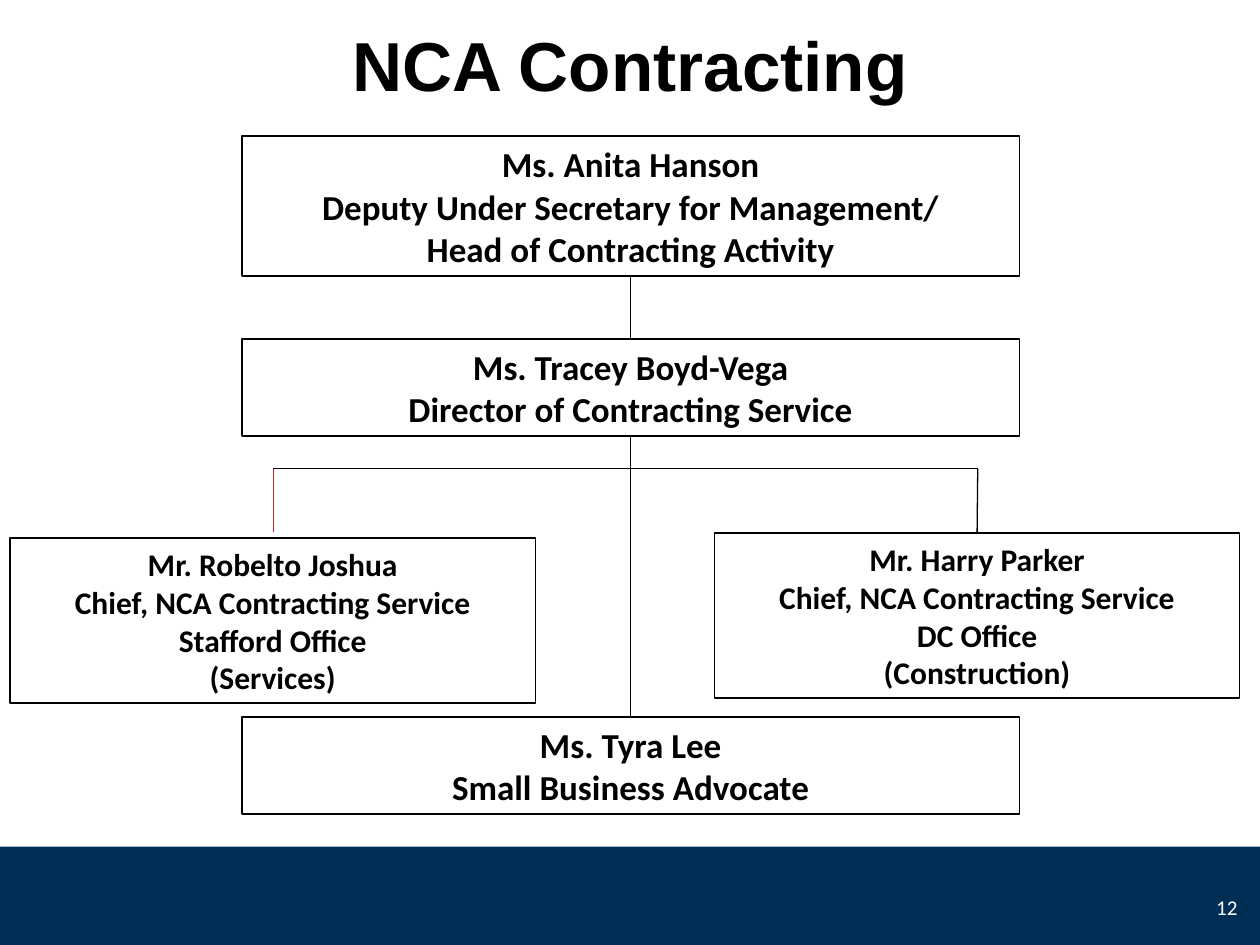
"""Build the NCA Contracting organisation chart slide."""
from dataclasses import dataclass
from typing import Optional

from lxml import etree
from pptx import Presentation
from pptx.dml.color import RGBColor
from pptx.enum import shapes, text
from pptx.oxml import ns
from pptx.util import Inches, Pt

BLACK = RGBColor(0x00, 0x00, 0x00)
WHITE = RGBColor(0xFF, 0xFF, 0xFF)
NAVY = RGBColor(0x00, 0x2F, 0x56)
RED = RGBColor(0xC6, 0x21, 0x2C)
TOP, BOTTOM = 0, 2
MAIN_LEFT, MAIN_WIDTH = 1.92, 6.17
OFFICE_WIDTH, OFFICE_HEIGHT = 4.17, 1.31


@dataclass(frozen=True)
class Post:
    left: float
    top: float
    width: float
    height: float
    size: int
    lines: tuple[str, ...]


@dataclass(frozen=True)
class Link:
    start: tuple[float, float]
    end: tuple[float, float]
    color: RGBColor = BLACK
    above: Optional[str] = None
    below: Optional[str] = None


POSTS = {
    "deputy": Post(MAIN_LEFT, 1.08, MAIN_WIDTH, 1.11, 20, (
        "Ms. Anita Hanson", "Deputy Under Secretary for Management/",
        "Head of Contracting Activity")),
    "director": Post(MAIN_LEFT, 2.69, MAIN_WIDTH, 0.77, 20, (
        "Ms. Tracey Boyd-Vega", "Director of Contracting Service")),
    "stafford": Post(0.08, 4.27, OFFICE_WIDTH, OFFICE_HEIGHT, 18, (
        "Mr. Robelto Joshua", "Chief, NCA Contracting Service",
        "Stafford Office", "(Services)")),
    "dc": Post(5.67, 4.23, OFFICE_WIDTH, OFFICE_HEIGHT, 18, (
        "Mr. Harry Parker", "Chief, NCA Contracting Service",
        "DC Office", "(Construction)")),
    "advocate": Post(MAIN_LEFT, 5.69, MAIN_WIDTH, 0.77, 20, (
        "Ms. Tyra Lee", "Small Business Advocate")),
}
LINKS = (
    Link((5.01, 3.72), (2.17, 3.72)),
    Link((5.01, 3.72), (7.76, 3.72)),
    Link((5, 3.46), (5, 5.69), above="director", below="advocate"),
    Link((2.17, 3.72), (2.17, 4.22), RED),
    Link((7.76, 3.72), (7.76, 4.23), below="dc"),
    Link((5, 2.19), (5, 2.69), above="deputy", below="director"),
)


def write(frame, lines: tuple[str, ...], size: float, font: str,
          color: RGBColor, bold: bool, align) -> None:
    """Fill a text frame with evenly styled paragraphs."""
    frame.word_wrap = True
    frame.vertical_anchor = text.MSO_ANCHOR.MIDDLE
    frame.text = "\n".join(lines)
    for paragraph in frame.paragraphs:
        paragraph.alignment = align
        paragraph.font.size = Pt(size)
        paragraph.font.name = font
        paragraph.font.bold = bold
        paragraph.font.color.rgb = color


def add_post(slide, post: Post):
    """Draw one outlined box of the chart."""
    box = slide.shapes.add_shape(
        shapes.MSO_SHAPE.RECTANGLE, Inches(post.left), Inches(post.top),
        Inches(post.width), Inches(post.height))
    box.shadow.inherit = False
    box.fill.background()
    box.line.color.rgb = BLACK
    box.line.width = Pt(0.75)
    write(box.text_frame, post.lines, post.size, "Calibri", BLACK, True,
          text.PP_ALIGN.CENTER)
    return box


def add_link(slide, link: Link, boxes: dict) -> None:
    """Draw one line, joined to the boxes it touches."""
    line = slide.shapes.add_connector(
        shapes.MSO_CONNECTOR.STRAIGHT,
        *(Inches(value) for value in link.start + link.end))
    if link.above:
        line.begin_connect(boxes[link.above], BOTTOM)
    if link.below:
        line.end_connect(boxes[link.below], TOP)
    line.line.color.rgb = link.color
    line.line.width = Pt(0.75)
    etree.SubElement(line._element.spPr, ns.qn("a:effectLst"))


def add_label(slide, left: float, top: float, width: float, height: float,
              words: str, size: float, font: str, color: RGBColor,
              bold: bool, align) -> None:
    """Place a single line of free text."""
    label = slide.shapes.add_textbox(
        Inches(left), Inches(top), Inches(width), Inches(height))
    write(label.text_frame, (words,), size, font, color, bold, align)


def main() -> None:
    """Assemble and save the slide."""
    deck = Presentation()
    deck.slide_width, deck.slide_height = Inches(10), Inches(7.5)
    slide = deck.slides.add_slide(deck.slide_layouts[6])

    footer = slide.shapes.add_shape(
        shapes.MSO_SHAPE.RECTANGLE, 0, Inches(6.72), Inches(10), Inches(0.78))
    footer.shadow.inherit = False
    footer.fill.solid()
    footer.fill.fore_color.rgb = NAVY
    footer.line.fill.background()

    boxes = {role: add_post(slide, post) for role, post in POSTS.items()}
    for link in LINKS:
        add_link(slide, link, boxes)

    add_label(slide, 0.43, 0.24, 9.14, 0.54, "NCA Contracting", 39.6,
              "Arial", BLACK, True, text.PP_ALIGN.CENTER)
    add_label(slide, 7.59, 7, 2.33, 0.4, "12", 12,
              "Calibri", WHITE, False, text.PP_ALIGN.RIGHT)
    deck.save("out.pptx")


if __name__ == "__main__":
    main()
